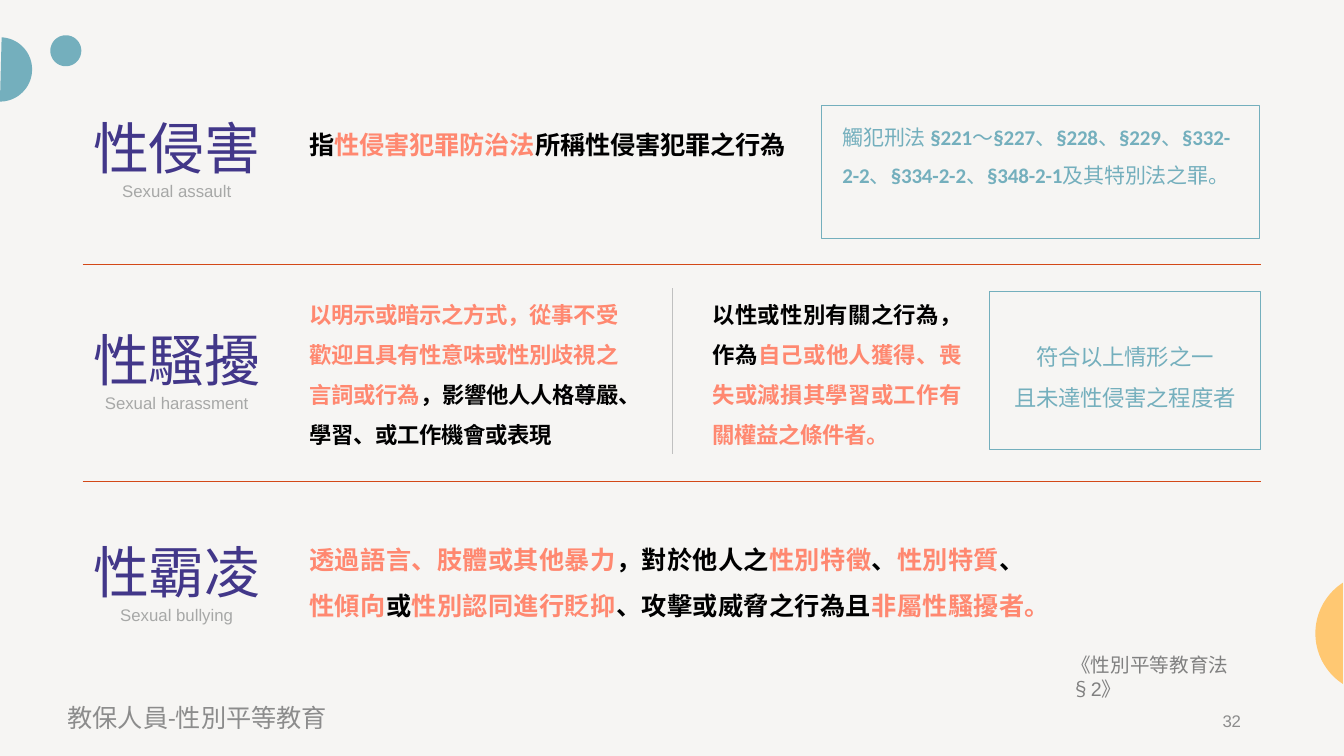
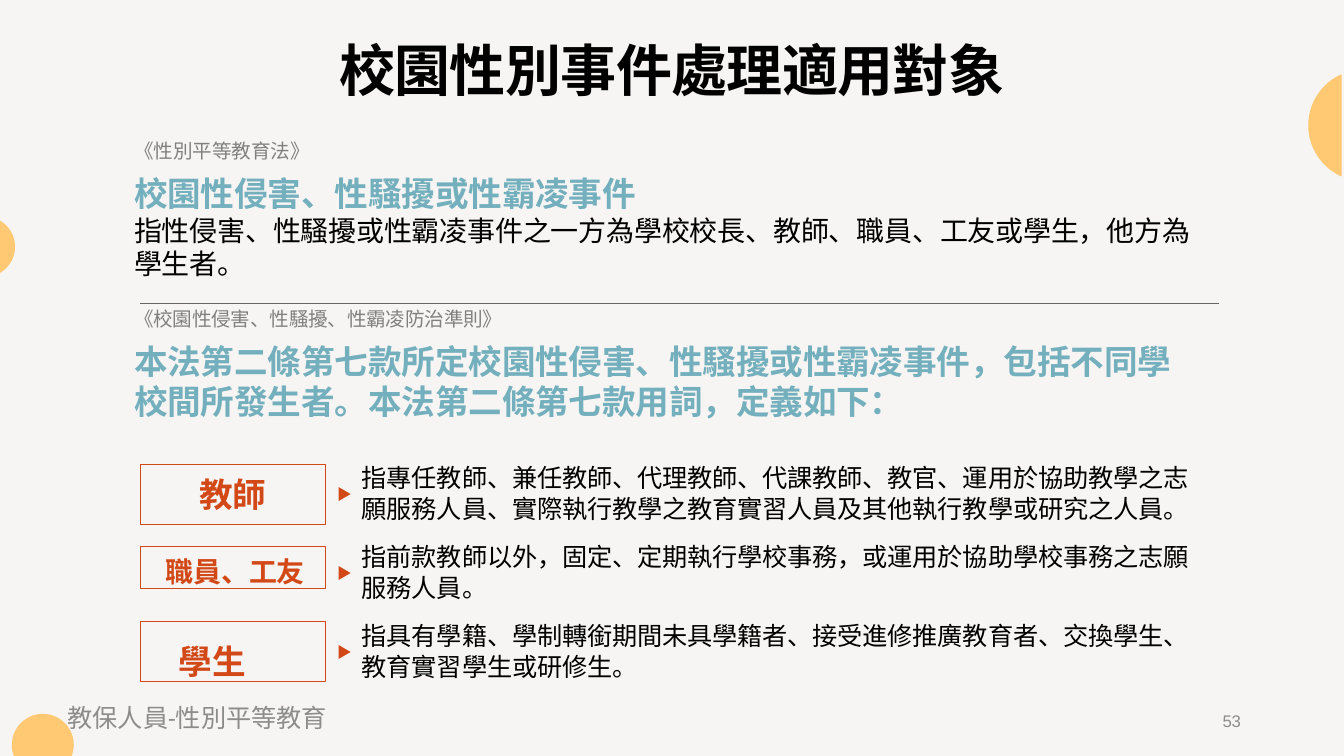
import math
from dataclasses import dataclass

import pptx
import pptx.dml.color
import pptx.enum.shapes
import pptx.enum.text
import pptx.oxml
import pptx.util
from lxml import etree

Cm, Pt = pptx.util.Cm, pptx.util.Pt
ALIGN = pptx.enum.text.PP_ALIGN
ANCHOR = pptx.enum.text.MSO_ANCHOR
SHAPE = pptx.enum.shapes.MSO_SHAPE
DRAWING_NS = "{http://schemas.openxmlformats.org/drawingml/2006/main}"


def rgb(code):
    return pptx.dml.color.RGBColor.from_string(code)


@dataclass(frozen=True)
class Theme:
    paper = rgb("F6F5F3")
    ink = rgb("000000")
    violet = rgb("423789")
    coral = rgb("FF8870")
    teal = rgb("74AFBD")
    rust = rgb("D34817")
    amber = rgb("FFC872")
    slate = rgb("696464")
    silver = rgb("C0C0C0")
    caption = rgb("808080")
    subtitle = rgb("A7A8A7")
    footer = rgb("8C8C8C")
    han = "Noto Sans CJK SC"
    han_jp = "Noto Sans CJK JP"
    latin = "Calibri"
    sans = "Arial"
    title_size = 40
    lead_size = 24
    text_size = 20
    body_size = 18
    detail_size = 16
    legal_size = 15
    note_size = 14
    small_size = 12


theme = Theme()


def write(shape, paragraphs, inset=(0, 0.03, 0, 0), anchor=ANCHOR.TOP):
    """Fill a shape; a run is (text, colour, font, bold), a newline breaks the line."""
    frame = shape.text_frame
    frame.word_wrap = True
    frame.auto_size = pptx.enum.text.MSO_AUTO_SIZE.NONE
    frame.vertical_anchor = anchor
    (frame.margin_left, frame.margin_top,
     frame.margin_right, frame.margin_bottom) = map(Cm, inset)
    for index, item in enumerate(paragraphs):
        paragraph = frame.add_paragraph() if index else frame.paragraphs[0]
        paragraph.alignment = item.get("align", ALIGN.LEFT)
        paragraph.line_spacing = item.get("line", 1.0)
        paragraph.space_before = Pt(item.get("before", 0))
        for text, color, *style in item["runs"]:
            font_name = style[0] if style else theme.han
            bold = style[1] if len(style) > 1 else item.get("bold", False)
            for line_index, line in enumerate(text.split("\n")):
                if line_index:
                    paragraph.add_line_break()
                if not line:
                    continue
                run = paragraph.add_run()
                run.text = line
                run.font.size = Pt(item["size"])
                run.font.name = font_name
                run.font.bold = bold
                run.font.color.rgb = color
                properties = run.font._element
                properties.set("spc", str(item.get("spc", 0)))
                etree.SubElement(properties, DRAWING_NS + "ea", typeface=theme.latin)


def add_box(slide, place, outline=None):
    """Add a text box, or a framed rectangle when an outline colour is given."""
    place = [Cm(length) for length in place]
    if outline is None:
        return slide.shapes.add_textbox(*place)
    box = slide.shapes.add_shape(SHAPE.RECTANGLE, *place)
    box.shadow.inherit = False
    box.fill.solid()
    box.fill.fore_color.rgb = theme.paper
    box.line.color.rgb = outline
    box.line.width = Pt(0.72)
    return box


deck = pptx.Presentation()
WIDTH, HEIGHT = 33.87, 19.05
deck.slide_width, deck.slide_height = Cm(WIDTH), Cm(HEIGHT)
background = deck.slide_master.background.fill
background.solid()
background.fore_color.rgb = theme.paper

# Shared parts: round ornaments cut at the slide edge, rules, footer, page number
# ornament: centre x, centre y, radius, colour; rule: x1, y1, x2, y2, colour
pages = [
    ("32",
     [(0, 1.75, 0.81, theme.teal), (1.66, 1.28, 0.39, theme.teal),
      (34.67, 15.96, 1.52, theme.amber)],
     [(2.08, 6.65, 31.78, 6.65, theme.rust), (2.08, 12.14, 31.78, 12.14, theme.rust),
      (16.94, 7.26, 16.94, 11.43, theme.silver)]),
    ("53",
     [(34.38, 3.16, 1.41, theme.amber), (-0.38, 6.22, 0.76, theme.amber),
      (1.08, 18.77, 0.78, theme.amber)],
     [(3.53, 7.65, 30.71, 7.65, theme.slate)]),
]
slides = []
for number, ornaments, rules in pages:
    slide = deck.slides.add_slide(deck.slide_layouts[5])
    slides.append(slide)
    for center_x, center_y, radius, color in ornaments:
        rim = [(center_x + radius * math.cos(math.radians(angle)),
                center_y + radius * math.sin(math.radians(angle)))
               for angle in range(0, 360, 3)]
        rim = [(Cm(x), Cm(y)) for x, y in rim if 0 <= x <= WIDTH and 0 <= y <= HEIGHT]
        builder = slide.shapes.build_freeform(*rim[0])
        builder.add_line_segments(rim[1:], close=True)
        ornament = builder.convert_to_shape()
        ornament.shadow.inherit = False
        ornament.fill.solid()
        ornament.fill.fore_color.rgb = color
        ornament.line.fill.background()
    for *ends, color in rules:
        rule = slide.shapes.add_connector(
            pptx.enum.shapes.MSO_CONNECTOR.STRAIGHT, *map(Cm, ends))
        rule.line.color.rgb = color
        rule.line.width = Pt(0.48)
        etree.SubElement(rule._element.spPr, DRAWING_NS + "effectLst")
    write(add_box(slide, (1.7, 17.7, 7.8, 0.97)),
          [dict(size=theme.body_size,
                runs=[("教保人員-性別平等教育", theme.footer, theme.latin)])],
          inset=(0, 0, 0, 0))
    write(add_box(slide, (30.71, 17.91, 0.71, 0.53)),
          [dict(size=theme.small_size, spc=-20, runs=[(number, theme.footer, theme.sans)])],
          inset=(0.1, 0, 0, 0))

definitions, subjects = slides

# Slide 1: three terms, the first one being the slide title
terms = [("性侵害", "Sexual assault"), ("性騷擾", "Sexual harassment"),
         ("性霸凌", "Sexual bullying")]
for row, (term, english) in enumerate(terms):
    place = (2.31, 2.82 + 5.35 * row, 4.29, 2.26)
    if row:
        heading = add_box(definitions, place)
    else:
        heading = definitions.shapes.title
        heading.left, heading.top, heading.width, heading.height = map(Cm, place)
    write(heading, [
        dict(size=theme.title_size, align=ALIGN.CENTER, spc=-40,
             runs=[(term, theme.violet)]),
        dict(size=theme.small_size, align=ALIGN.CENTER,
             runs=[(english, theme.subtitle, theme.sans)]),
    ])

# Definitions beside the terms
explanations = [
    ((7.8, 3.23, 12.22, 0.84),
     dict(size=theme.body_size, bold=True, spc=-10, runs=[
         ("指", theme.ink, theme.han_jp),
         ("性侵害犯罪防治法", theme.coral, theme.han_jp),
         ("所稱性侵害犯罪之行為", theme.ink, theme.han_jp)])),
    ((7.8, 7.21, 8.53, 4.14),
     dict(size=theme.detail_size, bold=True, line=1.5, spc=-20, runs=[
         ("以明示或暗示之方式，從事不受\n歡迎且具有性意味或性別歧視之\n言詞或行為", theme.coral),
         ("，影響他人人格尊嚴、\n學習、或工作機會或表現", theme.ink)])),
    ((17.96, 7.21, 6.27, 4.14),
     dict(size=theme.detail_size, bold=True, line=1.5, spc=-20, align=ALIGN.JUSTIFY, runs=[
         ("以性或性別有關之行為，作為", theme.ink),
         ("自己或他人獲得、喪失或減損其學習或工作有關權益之條件者。", theme.coral)])),
    ((7.8, 13.31, 18.82, 2.36),
     dict(size=theme.body_size, bold=True, line=1.5, spc=25, runs=[
         ("透過語言、肢體或其他暴力", theme.coral), ("，對於他人之", theme.ink),
         ("性別特徵", theme.coral), ("、", theme.ink),
         ("性別特質", theme.coral), ("、\n", theme.ink),
         ("性傾向", theme.coral), ("或", theme.ink),
         ("性別認同進行貶抑", theme.coral), ("、攻擊或威脅之行為且", theme.ink),
         ("非屬性騷擾者。", theme.coral)])),
    ((27, 16.43, 5.03, 1.2),
     dict(size=theme.note_size, runs=[
         ("《性別平等教育法\n§", theme.caption), ("2", theme.caption, theme.sans),
         ("》", theme.caption)])),
]
for place, paragraph in explanations:
    write(add_box(definitions, place), [paragraph])

# Framed remarks: the penal articles, and the condition for harassment
articles = ["觸犯刑法 ", "§221", "～", "§227", "、", "§228", "、", "§229", "、",
            "§332- 2-2", "、", "§334-2-2", "、", "§348-2-1", "及其特別法之罪。"]
article_runs = [(text, theme.teal, theme.latin, True) if index % 2 else (text, theme.teal)
                for index, text in enumerate(articles)]
write(add_box(definitions, (20.7, 2.67, 11.05, 3.33), theme.teal),
      [dict(size=theme.legal_size, line=1.5, spc=-10, runs=article_runs)],
      inset=(0.53, 0.15, 0.55, 0))
write(add_box(definitions, (24.94, 7.34, 6.83, 3.99), theme.teal),
      [dict(size=theme.detail_size, line=1.5, spc=-20, align=ALIGN.CENTER,
            runs=[("符合以上情形之一\n且未達性侵害之程度者", theme.teal)])],
      inset=(0, 0, 0, 0), anchor=ANCHOR.MIDDLE)

# Slide 2: title
title = subjects.shapes.title
title.left, title.top, title.width, title.height = map(Cm, (8.43, 0.86, 17, 1.75))
write(title, [dict(size=theme.title_size, bold=True, spc=-40, align=ALIGN.CENTER,
                   runs=[("校園性別事件處理適用對象", theme.ink)])])

# Legal sources
write(add_box(subjects, (3.38, 3.33, 26.9, 7.67)), [
    dict(size=theme.note_size, spc=-10, runs=[("《性別平等教育法》", theme.caption)]),
    dict(size=theme.lead_size, bold=True, spc=-10, before=7.2,
         runs=[("校園性侵害、性騷擾或性霸凌事件", theme.teal)]),
    dict(size=theme.text_size, spc=-20, runs=[
        ("指性侵害、性騷擾或性霸凌事件之一方為學校校長、教師、職員、工友或學生，"
         "他方為學生者。", theme.ink)]),
    dict(size=theme.note_size, spc=-20, before=19,
         runs=[("《校園性侵害、性騷擾、性霸凌防治準則》", theme.caption)]),
    dict(size=theme.lead_size, bold=True, spc=-10, before=7.2, runs=[
        ("本法第二條第七款所定校園性侵害、性騷擾或性霸凌事件，包括不同學校間所發生者。"
         "本法第二條第七款用詞，定義如下：", theme.teal)]),
], inset=(0, 0.18, 0, 0))

# Roles: label, frame top, frame height, size, left and top inset, meaning
roles = [
    ("教師", 11.71, 1.5, theme.lead_size, 1.5, 0,
     "指專任教師、兼任教師、代理教師、代課教師、教官、運用於協助教學之志願服務人員、"
     "實際執行教學之教育實習人員及其他執行教學或研究之人員。"),
    ("職員、工友", 13.77, 1.07, theme.text_size, 0.64, 0.16,
     "指前款教師以外，固定、定期執行學校事務，或運用於協助學校事務之志願服務人員。"),
    ("學生", 15.67, 1.5, theme.lead_size, 0.98, 0.46,
     "指具有學籍、學制轉銜期間未具學籍者、接受進修推廣教育者、交換學生、"
     "教育實習學生或研修生。"),
]
for row, (role, top, height, size, left_inset, top_inset, _) in enumerate(roles):
    write(add_box(subjects, (3.53, top, 4.67, height), theme.rust),
          [dict(size=size, bold=True, spc=-15, runs=[(role, theme.rust)])],
          inset=(left_inset, top_inset, 0, 0), anchor=ANCHOR.MIDDLE)
    marker = subjects.shapes.add_shape(
        SHAPE.ISOSCELES_TRIANGLE, Cm(8.51), Cm(12.3 + 1.99 * row), Cm(0.35), Cm(0.3))
    marker.rotation = 90
    marker.shadow.inherit = False
    marker.fill.solid()
    marker.fill.fore_color.rgb = theme.rust
    marker.line.fill.background()
write(add_box(subjects, (9.12, 11.63, 21.03, 5.59)),
      [dict(size=theme.body_size, spc=-10, before=13.2 if row else 0,
            runs=[(role[-1], theme.ink)]) for row, role in enumerate(roles)])

deck.save("out.pptx")
